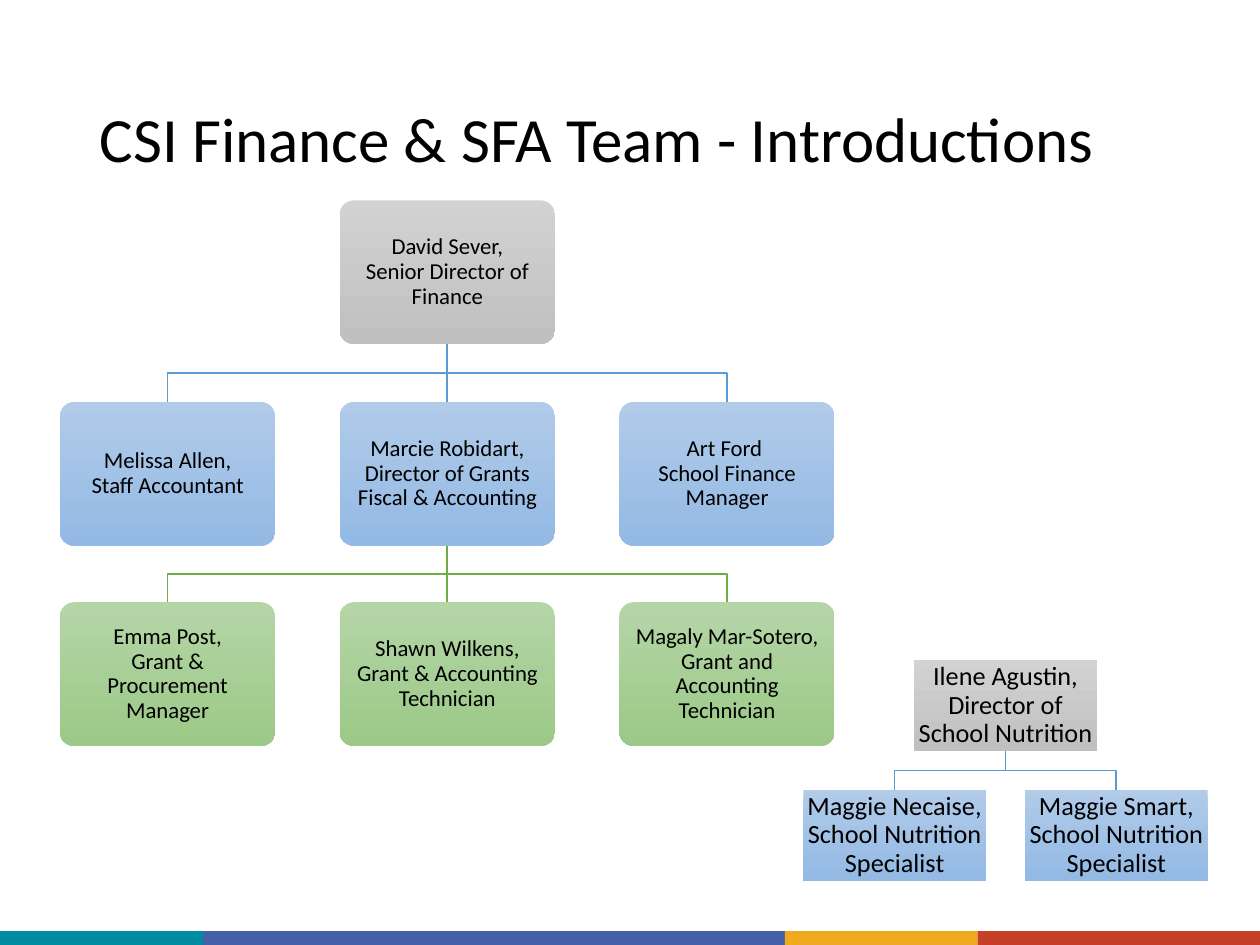
from lxml.etree import SubElement
from pptx import Presentation
from pptx.dml.color import RGBColor
from pptx.enum.shapes import MSO_CONNECTOR, MSO_SHAPE
from pptx.enum.text import MSO_ANCHOR, MSO_AUTO_SIZE, PP_ALIGN
from pptx.oxml.ns import qn
from pptx.util import Inches, Pt

BLACK = RGBColor(0x00, 0x00, 0x00)
TEAL = RGBColor(0x00, 0x8C, 0xA0)
INDIGO = RGBColor(0x45, 0x5F, 0xA9)
AMBER = RGBColor(0xEF, 0xAA, 0x1F)
RED = RGBColor(0xC6, 0x3F, 0x28)
BLUE_LINE = RGBColor(0x5B, 0x9B, 0xD5)
GREEN_LINE = RGBColor(0x70, 0xAD, 0x47)
GRAY = (RGBColor(0xD2, 0xD2, 0xD2), RGBColor(0xC0, 0xC0, 0xC0))
BLUE = (RGBColor(0xB1, 0xCB, 0xE9), RGBColor(0x93, 0xB9, 0xE4))
GREEN = (RGBColor(0xB5, 0xD5, 0xA7), RGBColor(0x9C, 0xC9, 0x87))


def write_text(frame, text, size, align=PP_ALIGN.LEFT, inset=None):
    frame.word_wrap = True
    frame.auto_size = MSO_AUTO_SIZE.NONE
    frame.vertical_anchor = MSO_ANCHOR.MIDDLE
    if inset is not None:
        frame.margin_left = frame.margin_right = Inches(inset)
        frame.margin_top = frame.margin_bottom = Inches(inset)
    para = frame.paragraphs[0]
    para.text = text
    para.alignment = align
    para.line_spacing = 0.9
    para.font.name = "Calibri"
    para.font.size = Pt(size)
    para.font.color.rgb = BLACK


class OrgChart:
    """Holds the page and the box style of the chart being drawn."""

    def __init__(self, page, width, height, size, inset, rounded):
        self.page = page
        self.width = width
        self.height = height
        self.size = size
        self.inset = inset
        self.rounded = rounded

    def box(self, center, top, text, colors):
        kind = MSO_SHAPE.ROUNDED_RECTANGLE if self.rounded else MSO_SHAPE.RECTANGLE
        box = self.page.shapes.add_shape(
            kind, Inches(center - self.width / 2), Inches(top),
            Inches(self.width), Inches(self.height))
        if self.rounded:
            box.adjustments[0] = 0.1
        box.shadow.inherit = False
        box.line.fill.background()
        box.fill.gradient()
        box.fill.gradient_angle = 270
        for stop, color in zip(box.fill.gradient_stops, colors):
            stop.color.rgb = color
        write_text(box.text_frame, text, self.size, PP_ALIGN.CENTER, self.inset)

    def link(self, parent, child, parent_top, child_top, color):
        """Join the bottom of a parent box to the top of a child box."""
        start = parent_top + self.height
        if parent == child:
            line = self.page.shapes.add_connector(
                MSO_CONNECTOR.STRAIGHT, Inches(parent), Inches(start),
                Inches(child), Inches(child_top))
            SubElement(line._element.spPr, qn("a:effectLst"))
        else:
            middle = (start + child_top) / 2
            builder = self.page.shapes.build_freeform(Inches(parent), Inches(start))
            builder.add_line_segments(
                [(Inches(x), Inches(y)) for x, y in
                 ((parent, middle), (child, middle), (child, child_top))],
                close=False)
            line = builder.convert_to_shape()
            line.shadow.inherit = False
            line.fill.background()
        line.line.color.rgb = color
        line.line.width = Pt(1)

    def team(self, parent, parent_top, top, members, colors, line_color):
        """Draw a row of boxes, each linked to the same parent."""
        for center, text in members:
            self.link(parent, center, parent_top, top, line_color)
            self.box(center, top, text, colors)


def add_footer_bands(page):
    edges = (0, 1.61, 6.23, 7.76, 10)
    for left, right, color in zip(edges, edges[1:], (TEAL, INDIGO, AMBER, RED)):
        band = page.shapes.add_shape(
            MSO_SHAPE.RECTANGLE, Inches(left), Inches(7.39),
            Inches(right - left), Inches(0.11))
        band.shadow.inherit = False
        band.fill.solid()
        band.fill.fore_color.rgb = color
        band.line.fill.background()


def add_title(page, text):
    title = page.shapes.title
    title.left, title.top = Inches(0.69), Inches(0.4)
    title.width, title.height = Inches(8.62), Inches(1.45)
    write_text(title.text_frame, text, 36)


def main():
    deck = Presentation()
    deck.slide_width, deck.slide_height = Inches(10), Inches(7.5)
    page = deck.slides.add_slide(deck.slide_layouts[5])
    add_footer_bands(page)
    add_title(page, "CSI Finance & SFA Team - Introductions")

    finance = OrgChart(page, 1.71, 1.14, size=13, inset=0.08, rounded=True)
    middle, step = 3.55, 2.22
    columns = (middle - step, middle, middle + step)
    director_top, manager_top, grants_top = 1.59, 3.19, 4.78
    finance.box(middle, director_top, "David Sever,\nSenior Director of Finance", GRAY)
    managers = (
        "Melissa Allen,\nStaff Accountant",
        "Marcie Robidart,\nDirector of Grants Fiscal & Accounting",
        "Art Ford \nSchool Finance Manager",
    )
    finance.team(middle, director_top, manager_top, zip(columns, managers),
                 BLUE, BLUE_LINE)
    grants_staff = (
        "Emma Post,\nGrant & Procurement Manager",
        "Shawn Wilkens,\nGrant & Accounting Technician",
        "Magaly Mar-Sotero,\nGrant and Accounting Technician",
    )
    finance.team(middle, manager_top, grants_top, zip(columns, grants_staff),
                 GREEN, GREEN_LINE)

    nutrition = OrgChart(page, 1.45, 0.72, size=15, inset=0.01, rounded=False)
    center, offset = 7.98, 0.88
    lead_top, specialist_top = 5.24, 6.27
    nutrition.box(center, lead_top, "Ilene Agustin,\nDirector of School Nutrition", GRAY)
    specialists = (
        (center - offset, "Maggie Necaise,\nSchool Nutrition Specialist"),
        (center + offset, "Maggie Smart,\nSchool Nutrition Specialist"),
    )
    nutrition.team(center, lead_top, specialist_top, specialists, BLUE, BLUE_LINE)

    deck.save("out.pptx")


if __name__ == "__main__":
    main()
